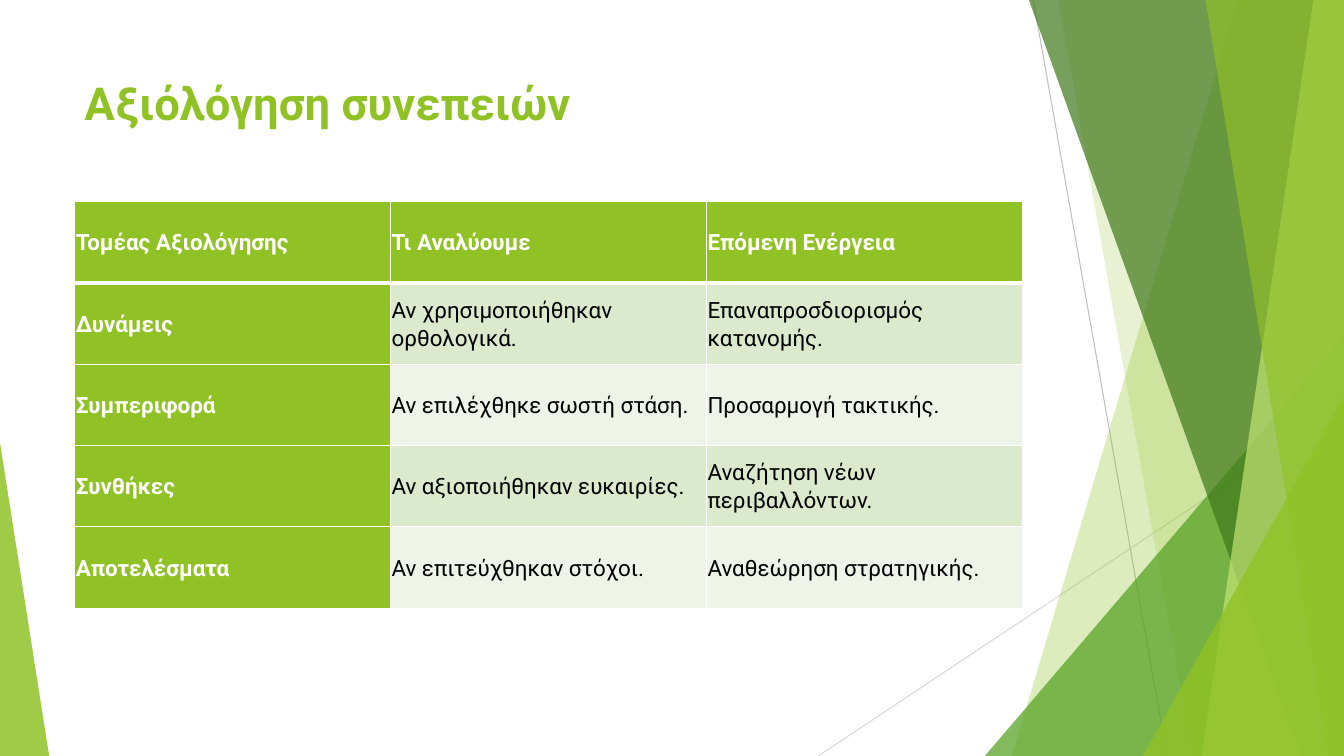
"""Builds the slide on evaluating consequences: a title and a table beside green facets."""
from pptx import Presentation
from pptx import util as u
from pptx.dml.color import RGBColor
from pptx.enum import shapes, text
from pptx.oxml import parse_xml
from pptx.oxml.ns import nsdecls, qn
from lxml import etree

GREEN = RGBColor(0x90, 0xC2, 0x26)
MID_GREEN = RGBColor(0x54, 0xA0, 0x21)
DARK_GREEN = RGBColor(0x3F, 0x78, 0x19)
LIGHT_GREEN = RGBColor(0xC0, 0xE4, 0x74)
ODD_ROW = RGBColor(0xDB, 0xE9, 0xCD)
EVEN_ROW = RGBColor(0xEE, 0xF4, 0xE8)
WHITE = RGBColor(0xFF, 0xFF, 0xFF)
BLACK = RGBColor(0, 0, 0)
GREY = RGBColor(0xBF, 0xBF, 0xBF)
PALE_GREY = RGBColor(0xD9, 0xD9, 0xD9)

WIDTH, HEIGHT = 33.87, 19.05

HEADING = "Αξιόλόγηση συνεπειών"
EVALUATION = [
    ("Τομέας Αξιολόγησης", "Τι Αναλύουμε", "Επόμενη Ενέργεια"),
    ("Δυνάμεις", "Αν χρησιμοποιήθηκαν ορθολογικά.", "Επαναπροσδιορισμός κατανομής."),
    ("Συμπεριφορά", "Αν επιλέχθηκε σωστή στάση.", "Προσαρμογή τακτικής."),
    ("Συνθήκες", "Αν αξιοποιήθηκαν ευκαιρίες.", "Αναζήτηση νέων περιβαλλόντων."),
    ("Αποτελέσματα", "Αν επιτεύχθηκαν στόχοι.", "Αναθεώρηση στρατηγικής."),
]


def apply(target, formats):
    for name, value in formats.items():
        setattr(target, name, value)


class FacetSlide:
    font = "Roboto"
    cell_format = dict(
        vertical_anchor=text.MSO_ANCHOR.MIDDLE,
        margin_left=u.Cm(0.03), margin_right=u.Cm(0.03),
        margin_top=u.Cm(0.03), margin_bottom=u.Cm(0.03),
    )
    cell_paragraph = dict(line_spacing=1.07, space_after=u.Pt(8))
    title_frame = dict(
        word_wrap=True, vertical_anchor=text.MSO_ANCHOR.TOP,
        margin_left=u.Cm(0.25), margin_top=u.Cm(0.2),
    )

    def __init__(self, slide):
        self.slide = slide

    def line(self, x1, y1, x2, y2, color):
        ray = self.slide.shapes.add_connector(
            shapes.MSO_CONNECTOR.STRAIGHT, u.Cm(x1), u.Cm(y1), u.Cm(x2), u.Cm(y2))
        ray.line.color.rgb = color
        ray.line.width = u.Pt(0.75)
        etree.SubElement(ray._element.spPr, qn("a:effectLst"))

    def paint(self, facet, color, opacity):
        facet.shadow.inherit = False
        facet.line.fill.background()
        facet.fill.solid()
        facet.fill.fore_color.rgb = color
        tint = facet._element.spPr.find(".//" + qn("a:srgbClr"))
        etree.SubElement(tint, qn("a:alpha"), val=str(opacity * 1000))

    def band(self, top_x, bottom_x, color, opacity):
        outline = self.slide.shapes.build_freeform(u.Cm(top_x), 0)
        corners = [(WIDTH, 0), (WIDTH, HEIGHT), (bottom_x, HEIGHT)]
        outline.add_line_segments([(u.Cm(x), u.Cm(y)) for x, y in corners])
        self.paint(outline.convert_to_shape(), color, opacity)

    def corner(self, left, top, width, apex, color, opacity):
        facet = self.slide.shapes.add_shape(
            shapes.MSO_SHAPE.ISOSCELES_TRIANGLE,
            u.Cm(left), u.Cm(top), u.Cm(width), u.Cm(HEIGHT - top))
        facet.adjustments[0] = apex
        self.paint(facet, color, opacity)

    def add_words(self, paragraph, words, size, color, bold):
        run = paragraph.add_run()
        run.text = words
        apply(run.font, dict(name=self.font, size=u.Pt(size), bold=bold))
        run.font.color.rgb = color

    def title(self, words, left, top, width, height):
        box = self.slide.shapes.add_textbox(u.Cm(left), u.Cm(top), u.Cm(width), u.Cm(height))
        apply(box.text_frame, self.title_frame)
        self.add_words(box.text_frame.paragraphs[0], words, 32.4, GREEN, True)

    def borders(self, cell, widths):
        properties = cell._tc.get_or_add_tcPr()
        for position, (side, points) in enumerate(widths.items()):
            properties.insert(position, parse_xml(
                f'<a:ln{side} {nsdecls("a")} w="{u.Pt(points)}"><a:solidFill>'
                f'<a:srgbClr val="{WHITE}"/></a:solidFill></a:ln{side}>'))

    def table(self, rows, left, top, column_width, row_height):
        grid = self.slide.shapes.add_table(
            len(rows), len(rows[0]), u.Cm(left), u.Cm(top),
            u.Cm(column_width * len(rows[0])), u.Cm(row_height * len(rows))).table
        for r, row in enumerate(rows):
            grid.rows[r].height = u.Cm(row_height)
            for c, words in enumerate(row):
                cell = grid.cell(r, c)
                is_header = r == 0 or c == 0
                apply(cell, self.cell_format)
                cell.fill.solid()
                cell.fill.fore_color.rgb = GREEN if is_header else ODD_ROW if r % 2 else EVEN_ROW
                self.borders(cell, dict(L=1, R=1, T=3 if r == 1 else 1, B=3 if r == 0 else 1))
                paragraph = cell.text_frame.paragraphs[0]
                apply(paragraph, self.cell_paragraph)
                self.add_words(paragraph, words, 16, WHITE if is_header else BLACK, is_header)


def main():
    deck = Presentation()
    apply(deck, dict(slide_width=u.Cm(WIDTH), slide_height=u.Cm(HEIGHT)))
    page = FacetSlide(deck.slides.add_slide(deck.slide_layouts[6]))

    page.line(26.04, 0, 29.41, HEIGHT, GREY)
    page.line(WIDTH, 10.24, 20.62, HEIGHT, PALE_GREY)
    page.band(31.19, 25.5, GREEN, 30)
    page.band(26.67, 30.05, GREEN, 20)
    page.corner(24.82, 8.46, 9.05, 1, MID_GREEN, 72)
    page.band(25.93, 32.79, DARK_GREEN, 70)
    page.band(33.1, 30.28, LIGHT_GREEN, 70)
    page.band(30.38, 33.48, GREEN, 65)
    page.corner(28.8, 9.98, 5.07, 1, GREEN, 80)
    page.corner(0, 11.15, 1.24, 0, GREEN, 85)

    page.title(HEADING, 1.88, 1.7, 23.88, 3.66)
    page.table(EVALUATION, 1.88, 5.08, 7.96, 2.05)
    deck.save("out.pptx")


if __name__ == "__main__":
    main()
